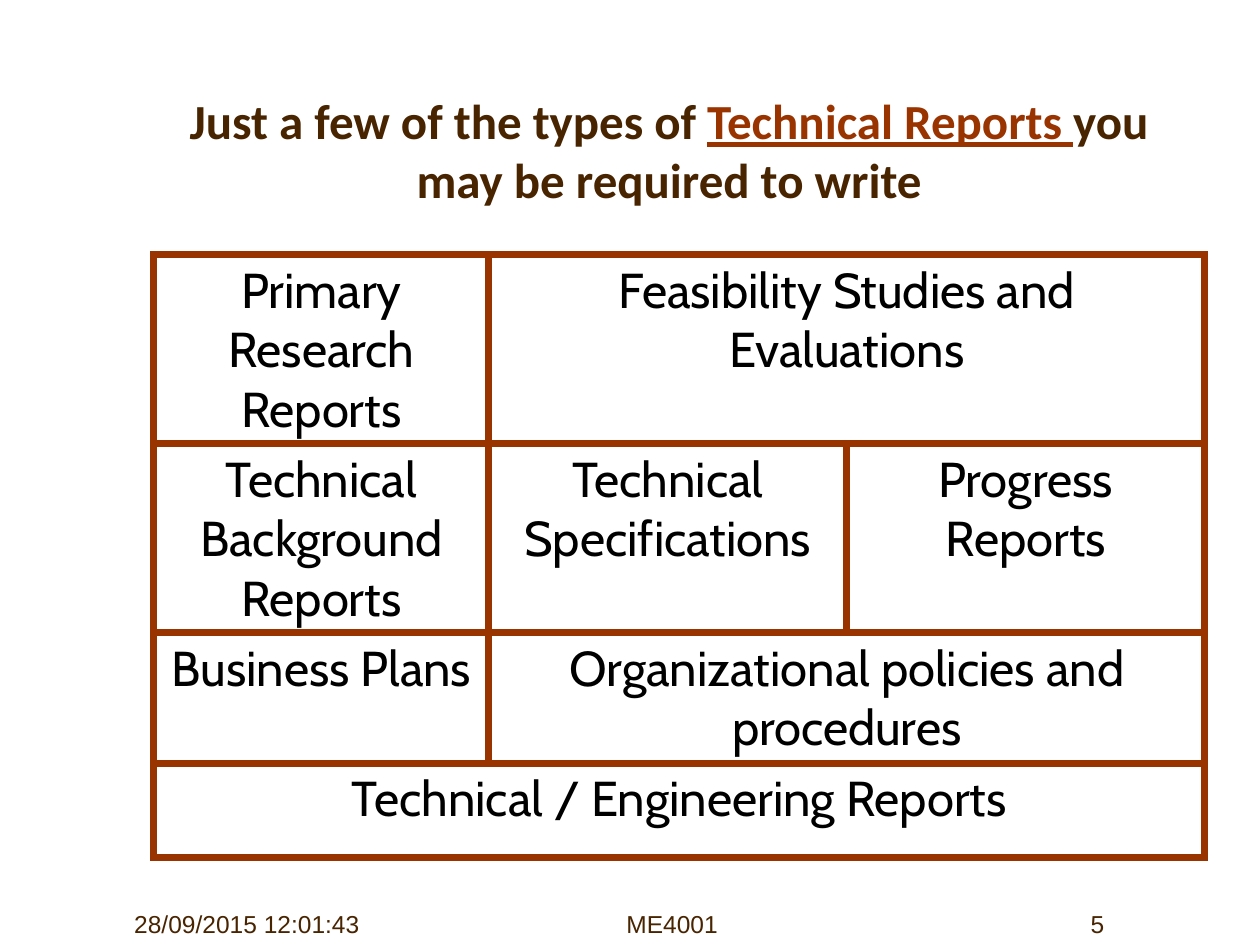
import pptx
import pptx.dml.color
import pptx.enum.text
import pptx.oxml
import pptx.oxml.ns
import pptx.util
from pptx.util import Inches

COLORS = {"brown": "482400", "rust": "993300", "black": "000000"}
CENTER = pptx.enum.text.PP_ALIGN.CENTER
BORDER_POINTS = 4.5

COLUMN_WIDTHS = [2.66, 2.84, 2.84]
ROW_HEIGHTS = [1.5, 1.5, 1.03, 0.75]
REPORT_ROWS = [
    [("Primary Research Reports", 1), ("Feasibility Studies and Evaluations", 2)],
    [("Technical Background Reports", 1), ("Technical Specifications", 1), ("Progress Reports", 1)],
    [("Business Plans", 1), ("Organizational policies and procedures", 2)],
    [("Technical / Engineering Reports", 3)],
]


def add_text(paragraph, text, font="Calibri", size=28, color="brown", bold=False, underline=False):
    paragraph.alignment = CENTER
    run = paragraph.add_run()
    run.text = text
    run.font.name = font
    run.font.size = pptx.util.Pt(size)
    run.font.bold = bold
    run.font.underline = underline
    run.font.color.rgb = pptx.dml.color.RGBColor.from_string(COLORS[color])


def add_bottom_box(slide, left, top, width, height):
    shape = slide.shapes.add_textbox(Inches(left), Inches(top), Inches(width), Inches(height))
    frame = shape.text_frame
    frame.word_wrap = True
    frame.vertical_anchor = pptx.enum.text.MSO_ANCHOR.BOTTOM
    return frame.paragraphs[0]


def add_title(slide, left, top, width, height):
    paragraph = add_bottom_box(slide, left, top, width, height)
    add_text(paragraph, "Just a few of the types of ", bold=True)
    add_text(paragraph, "Technical Reports ", color="rust", bold=True, underline=True)
    add_text(paragraph, "you may be required to write", bold=True)


def style_cell(cell):
    properties = cell._tc.get_or_add_tcPr()
    for side in ("lnL", "lnR", "lnT", "lnB"):
        properties.append(pptx.oxml.parse_xml(
            f'<a:{side} {pptx.oxml.ns.nsdecls("a")} w="{pptx.util.Pt(BORDER_POINTS)}">'
            f'<a:solidFill><a:srgbClr val="{COLORS["rust"]}"/></a:solidFill></a:{side}>'))
    cell.fill.background()


def add_report_table(slide, left, top, width, height):
    frame = slide.shapes.add_table(len(ROW_HEIGHTS), len(COLUMN_WIDTHS),
                                   Inches(left), Inches(top), Inches(width), Inches(height))
    table = frame.table
    table.first_row = False
    table.horz_banding = False
    for column, column_width in zip(table.columns, COLUMN_WIDTHS):
        column.width = Inches(column_width)
    for row, row_height in zip(table.rows, ROW_HEIGHTS):
        row.height = Inches(row_height)
    for cell in table.iter_cells():
        style_cell(cell)
    for row_index, reports in enumerate(REPORT_ROWS):
        column_index = 0
        for text, span in reports:
            cell = table.cell(row_index, column_index)
            if span > 1:
                cell.merge(table.cell(row_index, column_index + span - 1))
            add_text(cell.text_frame.paragraphs[0], text, font="Cabin", color="black")
            column_index += span


def add_footer(slide, top, height):
    for text, left, width in [("28/09/2015 12:01:43", 0.92, 2.08),
                              ("ME4001", 3.75, 3.17),
                              ("5", 7.67, 2.08)]:
        paragraph = add_bottom_box(slide, left, top, width, height)
        add_text(paragraph, text, font="Arial", size=14)


def main():
    presentation = pptx.Presentation()
    presentation.slide_width = Inches(10)
    presentation.slide_height = Inches(7.5)
    slide = presentation.slides.add_slide(presentation.slide_layouts[6])
    add_footer(slide, 7, 0.5)
    add_title(slide, 1.06, 0.28, 8.5, 1.42)
    add_report_table(slide, 1.22, 2.02, sum(COLUMN_WIDTHS), sum(ROW_HEIGHTS))
    presentation.save("out.pptx")


if __name__ == "__main__":
    main()
